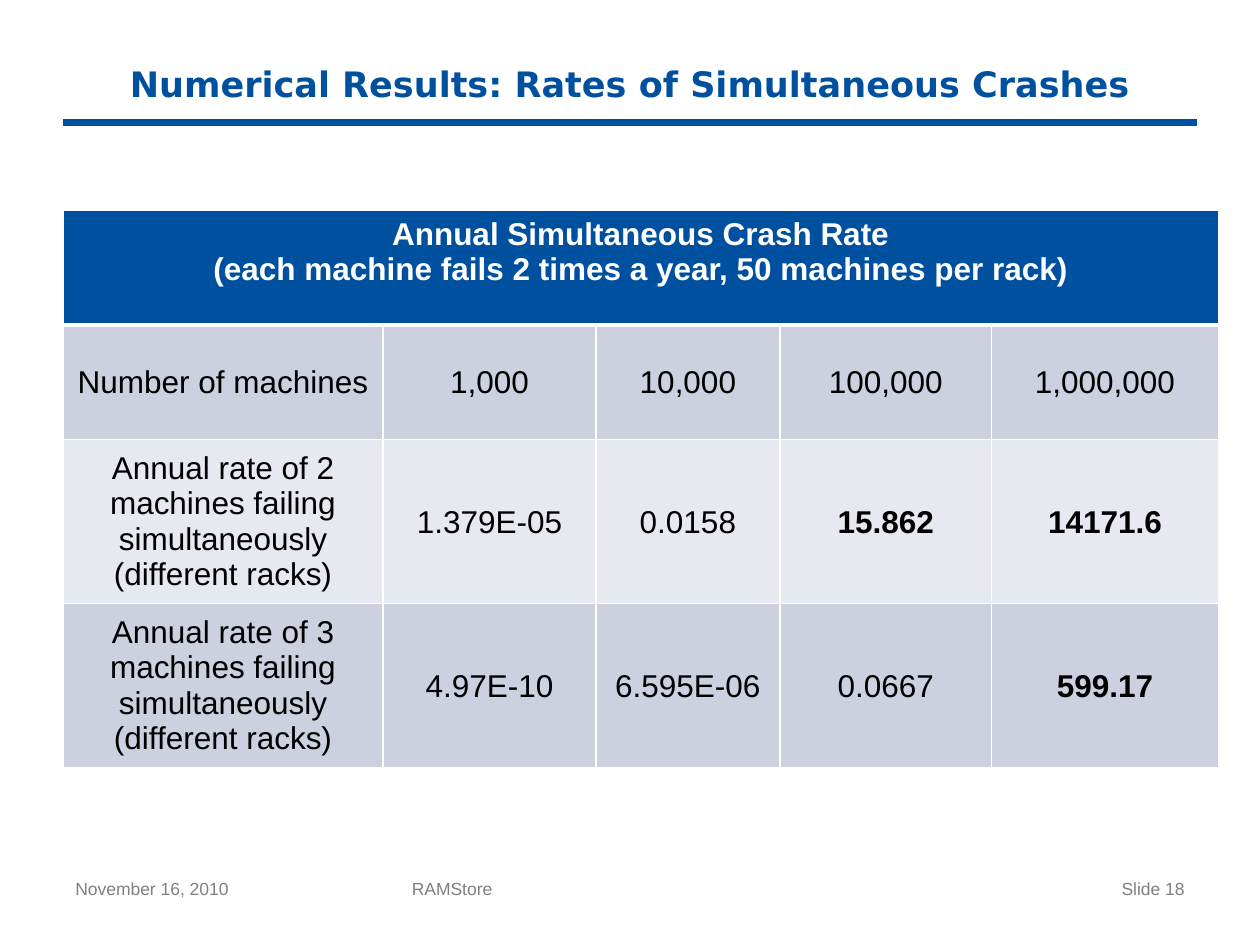
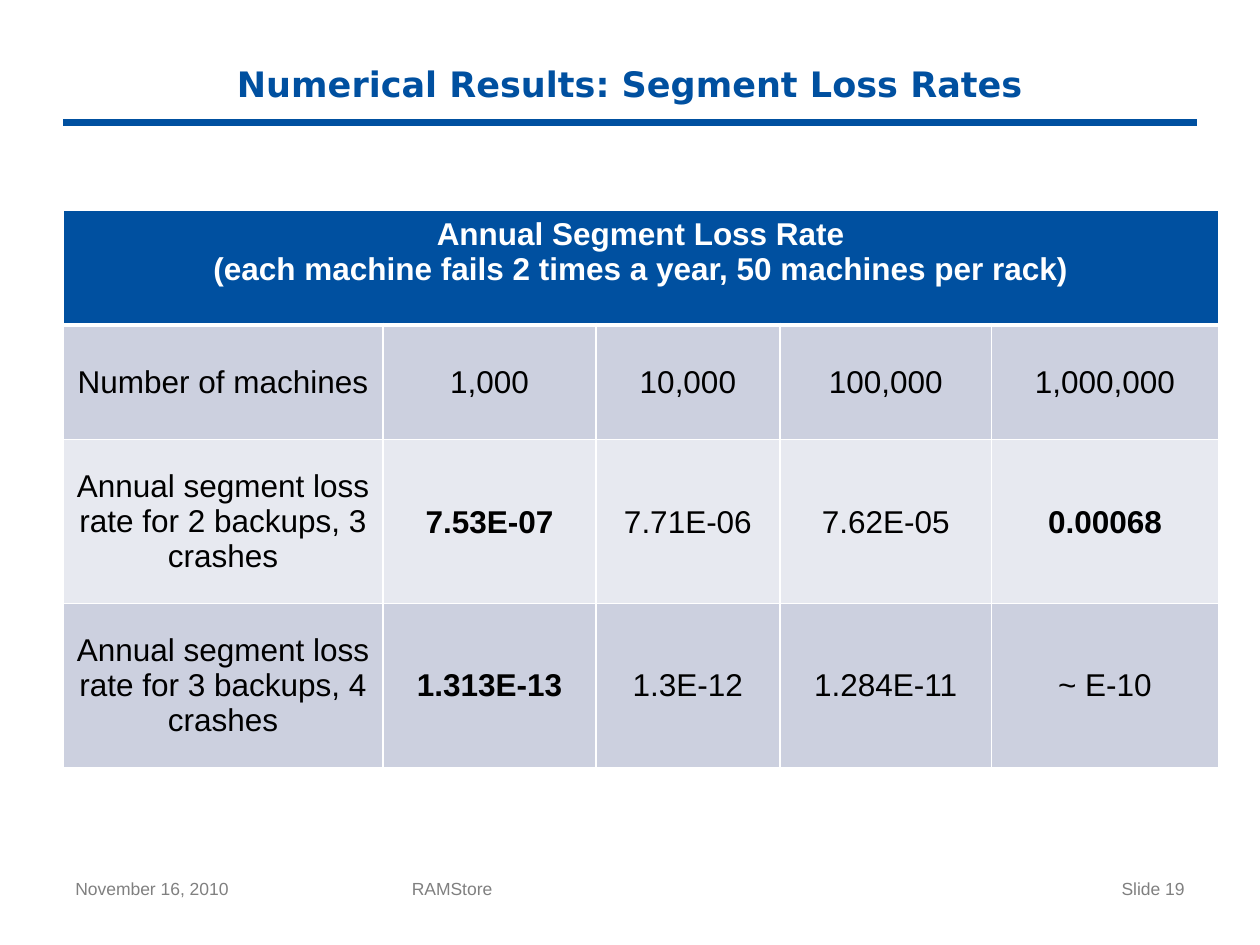
"""Builds two slides of crash and segment loss rates for a memory cluster."""
from dataclasses import dataclass

from lxml import etree
from pptx import Presentation
from pptx.dml.color import RGBColor
from pptx.enum.shapes import MSO_CONNECTOR
from pptx.enum.text import MSO_ANCHOR, PP_ALIGN
from pptx.oxml.ns import qn
from pptx.util import Inches, Pt

STRAIGHT = MSO_CONNECTOR.STRAIGHT
TOP, MIDDLE = MSO_ANCHOR.TOP, MSO_ANCHOR.MIDDLE
LEFT, CENTER, RIGHT = PP_ALIGN.LEFT, PP_ALIGN.CENTER, PP_ALIGN.RIGHT


@dataclass(frozen=True)
class Theme:
    """Colours, fonts and type sizes of the deck."""
    blue: str = "0050A0"
    white: str = "FFFFFF"
    black: str = "000000"
    gray: str = "808080"
    band_dark: str = "CCD0DF"
    band_light: str = "E7E9F0"
    title_font: str = "DejaVu Sans"
    body_font: str = "Arial"
    title_size: int = 20
    table_size: int = 18
    footer_size: int = 10
    rule_width: int = 4
    grid_width: int = 1
    header_rule_width: int = 3


THEME = Theme()
COLUMN_WIDTHS = (2.54, 1.69, 1.46, 1.68, 1.8)
ROW_HEIGHTS = (0.91, 0.91, 1.3, 1.3)
MACHINE_COUNTS = ("Number of machines", "1,000", "10,000", "100,000", "1,000,000")
ASSUMPTIONS = "(each machine fails 2 times a year, 50 machines per rack)"
FIRST_SLIDE_NUMBER = 18

RESULTS = (
    {
        "title": "Numerical Results: Rates of Simultaneous Crashes",
        "heading": "Annual Simultaneous Crash Rate",
        "rates": (
            ("Annual rate of 2 machines failing simultaneously (different racks)",
             "1.379E-05", "0.0158", "15.862", "14171.6"),
            ("Annual rate of 3 machines failing simultaneously (different racks)",
             "4.97E-10", "6.595E-06", "0.0667", "599.17"),
        ),
        "highlights": {"15.862", "14171.6", "599.17"},
    },
    {
        "title": "Numerical Results: Segment Loss Rates",
        "heading": "Annual Segment Loss Rate",
        "rates": (
            ("Annual segment loss rate for 2 backups, 3 crashes",
             "7.53E-07", "7.71E-06", "7.62E-05", "0.00068"),
            ("Annual segment loss rate for 3 backups, 4 crashes",
             "1.313E-13", "1.3E-12", "1.284E-11", "~ E-10"),
        ),
        "highlights": {"7.53E-07", "0.00068", "1.313E-13"},
    },
)


def write_text(frame, text, *, size, color, font=THEME.body_font, bold=False, align=LEFT):
    """Write one paragraph per line of text in the given format."""
    for index, line in enumerate(text.split("\n")):
        paragraph = frame.add_paragraph() if index else frame.paragraphs[0]
        paragraph.alignment = align
        run = paragraph.add_run()
        run.text = line
        run.font.name = font
        run.font.size = Pt(size)
        run.font.bold = bold
        run.font.color.rgb = RGBColor.from_string(color)


def set_borders(cell, color, **widths):
    """Draw the cell edges named L, R, T and B at their widths in points."""
    properties = cell._tc.get_or_add_tcPr()
    for position, (edge, width) in enumerate(widths.items()):
        line = etree.Element(qn(f"a:ln{edge}"), w=str(Pt(width)))
        fill = etree.SubElement(line, qn("a:solidFill"))
        etree.SubElement(fill, qn("a:srgbClr"), val=color)
        properties.insert(position, line)


class Deck:
    """Holds the theme and the current slide, and adds elements to it."""

    def __init__(self, presentation, theme):
        """Keep the presentation and its theme."""
        self.presentation = presentation
        self.theme = theme
        self.slide = None

    def start_slide(self, title, number):
        """Add a slide with its title, rule and footers."""
        theme = self.theme
        self.slide = self.presentation.slides.add_slide(self.presentation.slide_layouts[6])
        self.add_rule(0.5, 9.5, 0.97)
        self.add_text(title, 0.5, 0.33, 9, 0.67, anchor=MIDDLE, size=theme.title_size,
                      color=theme.blue, font=theme.title_font, bold=True, align=CENTER)
        footers = (
            ("November 16, 2010", 0.5, 2.33, LEFT),
            ("RAMStore", 3.17, 3.75, LEFT),
            (f"Slide {number}", 7.17, 2.33, RIGHT),
        )
        for text, left, width, align in footers:
            self.add_text(text, left, 6.92, width, 0.43, size=theme.footer_size,
                          color=theme.gray, align=align)

    def add_rule(self, start, end, y):
        """Add a horizontal rule."""
        rule = self.slide.shapes.add_connector(
            STRAIGHT, Inches(start), Inches(y), Inches(end), Inches(y))
        rule.line.color.rgb = RGBColor.from_string(self.theme.blue)
        rule.line.width = Pt(self.theme.rule_width)
        etree.SubElement(rule._element.spPr, qn("a:effectLst"))

    def add_text(self, text, left, top, width, height, anchor=TOP, **text_format):
        """Add a wrapping text box."""
        box = self.slide.shapes.add_textbox(
            Inches(left), Inches(top), Inches(width), Inches(height))
        box.text_frame.word_wrap = True
        box.text_frame.vertical_anchor = anchor
        write_text(box.text_frame, text, **text_format)

    def add_rate_table(self, heading, rates, highlights):
        """Add a table with a merged heading above the machine counts and rates."""
        theme = self.theme
        table = self.slide.shapes.add_table(
            len(ROW_HEIGHTS), len(COLUMN_WIDTHS), Inches(0.5), Inches(1.67),
            Inches(sum(COLUMN_WIDTHS)), Inches(sum(ROW_HEIGHTS))).table
        table.first_row = table.horz_banding = False
        for column, width in zip(table.columns, COLUMN_WIDTHS):
            column.width = Inches(width)
        for row, height in zip(table.rows, ROW_HEIGHTS):
            row.height = Inches(height)

        heading_cell = table.cell(0, 0)
        heading_cell.merge(table.cell(0, len(COLUMN_WIDTHS) - 1))
        for cell in table.rows[0].cells:
            self.style_cell(cell, theme.blue, bottom=theme.header_rule_width)
        write_text(heading_cell.text_frame, f"{heading}\n{ASSUMPTIONS}",
                   size=theme.table_size, color=theme.white, bold=True, align=CENTER)

        for row, values in enumerate((MACHINE_COUNTS, *rates), start=1):
            band = theme.band_dark if row % 2 else theme.band_light
            top = theme.header_rule_width if row == 1 else theme.grid_width
            for column, value in enumerate(values):
                cell = table.cell(row, column)
                self.style_cell(cell, band, top=top)
                cell.vertical_anchor = MIDDLE
                if row > 1 and column:
                    cell.margin_left = cell.margin_right = cell.margin_top = Inches(0.01)
                    cell.margin_bottom = 0
                write_text(cell.text_frame, value, size=theme.table_size,
                           color=theme.black, bold=value in highlights, align=CENTER)

    def style_cell(self, cell, fill, top=THEME.grid_width, bottom=THEME.grid_width):
        """Fill a cell and draw its grid lines."""
        cell.fill.solid()
        cell.fill.fore_color.rgb = RGBColor.from_string(fill)
        side = self.theme.grid_width
        set_borders(cell, self.theme.white, L=side, R=side, T=top, B=bottom)


def main():
    """Build and save the deck."""
    presentation = Presentation()
    presentation.slide_width = Inches(10)
    presentation.slide_height = Inches(7.5)
    deck = Deck(presentation, THEME)
    for number, result in enumerate(RESULTS, start=FIRST_SLIDE_NUMBER):
        deck.start_slide(result["title"], number)
        deck.add_rate_table(result["heading"], result["rates"], result["highlights"])
    presentation.save("out.pptx")


if __name__ == "__main__":
    main()
